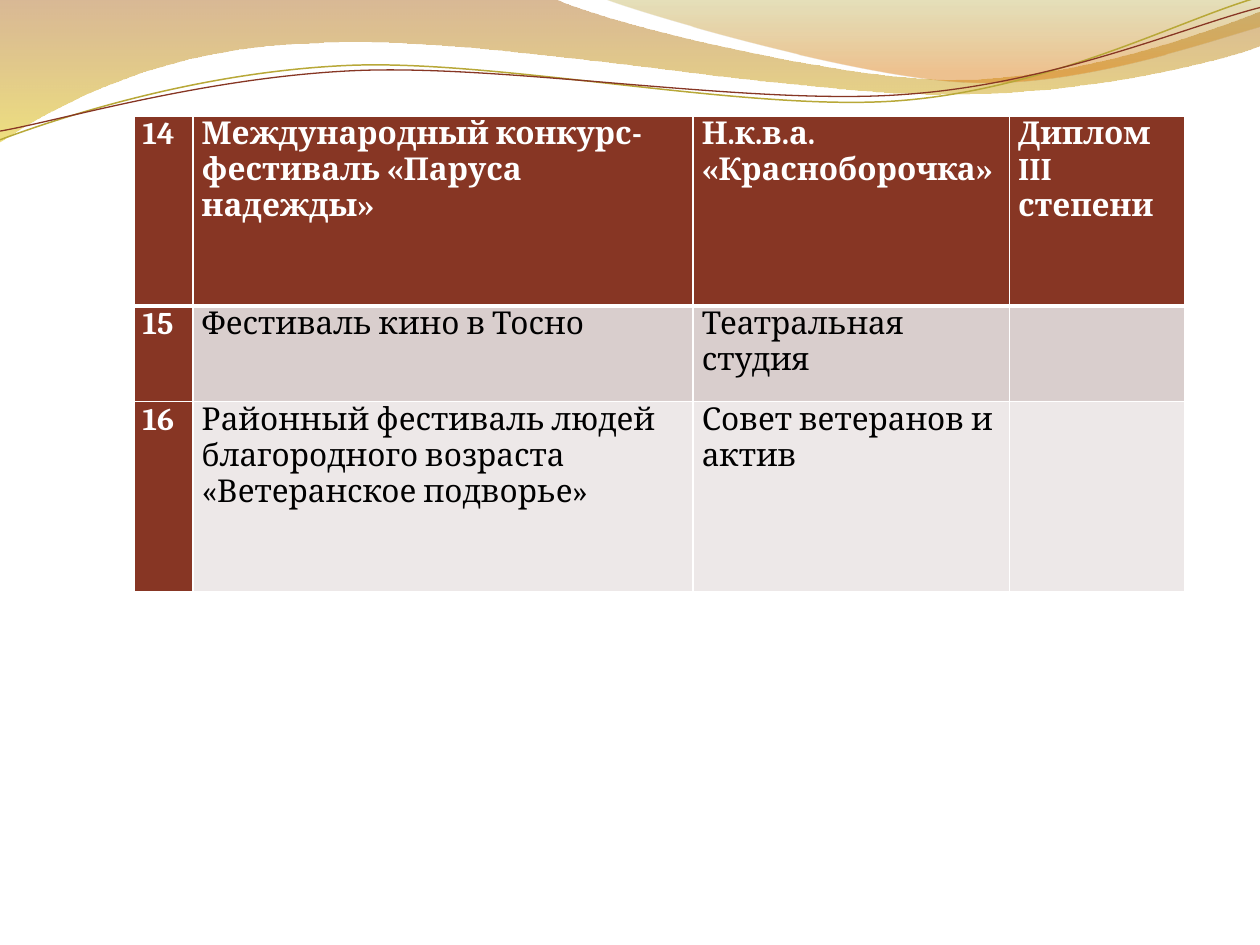
from lxml import etree
from pptx import Presentation
from pptx import util as u
from pptx.dml import color
from pptx.oxml import ns

Pt = u.Pt
FONT = "Cambria"
COLORS = {
    "white": "FFFFFF", "black": "000000", "brick": "873624",
    "band_dark": "D9CECD", "band_light": "EDE8E8", "olive": "B8A838",
    "brown": "AB6415", "yellow": "E1C716", "moss": "AA991F", "orange": "DB780A",
}

# Outlines: a start point, then segments of one point (line) or three (curve)
WIDE_WAVE = [
    (0, 0),
    [(316.8, -0.7)],
    [(342.7, 12.2), (478.1, 45.4), (545.8, 45.4)],
    [(614.2, 45.4), (689.8, 18.7), (720, 6.5)],
    [(720.7, 25.9)],
    [(707.8, 31.7), (626.4, 54.7), (537.1, 54)],
    [(447.8, 54), (275, 20.2), (185, 24.5)],
    [(92.9, 25.9), (33.1, 59.8), (-0.7, 81.4)],
]
RIGHT_WAVE = [
    (344.9, -0.7),
    [(366.5, 7.9), (491, 44.6), (553.7, 46.8)],
    [(616.3, 49.7), (691.9, 23), (720, 15.1)],
    [(720, 0)],
]
OLIVE_LINE = [
    (0, 79.9),
    [(34.6, 67), (113.8, 41), (199.4, 37.4)],
    [(284.4, 33.8), (427, 64.1), (513.4, 57.6)],
    [(599.8, 51.1), (675.4, 10.8), (718.6, -1.4)],
]
BRICK_LINE = [
    (0, 74.9),
    [(33.8, 69.1), (118.1, 43.9), (203.8, 40.3)],
    [(290.2, 36.7), (429.8, 60.5), (516.2, 54)],
    [(601.9, 48.2), (677.5, 15.1), (720, 4.3)],
]

COLUMN_WIDTHS = [33.8, 285.8, 180.7, 100.1]
ROW_HEIGHTS = [108.7, 54.7, 108.7]
ROWS = [
    ["14", "Международный конкурс-фестиваль «Паруса надежды»",
     "Н.к.в.а. «Красноборочка»", "Диплом III степени"],
    ["15", "Фестиваль кино в Тосно", "Театральная студия", ""],
    ["16", "Районный фестиваль людей благородного возраста «Ветеранское подворье»",
     "Совет ветеранов и актив", ""],
]


def rgb(name):
    return color.RGBColor.from_string(COLORS[name])


def add_curve(slide, left, top, outline, close):
    """Build a freeform, then turn each three-point segment into a Bezier curve."""
    start, *segments = outline

    def place(point):
        return Pt(left + point[0]), Pt(top + point[1])

    builder = slide.shapes.build_freeform(*place(start))
    builder.add_line_segments(
        [place(point) for segment in segments for point in segment], close=close)
    shape = builder.convert_to_shape()
    shape.shadow.inherit = False
    steps = iter(list(shape.element.iter(ns.qn("a:lnTo"))))
    for segment in segments:
        first, *others = [next(steps) for _ in segment]
        if others:
            curve = etree.Element(ns.qn("a:cubicBezTo"))
            first.addprevious(curve)
            for step in [first, *others]:
                curve.append(step[0])
                step.getparent().remove(step)
    return shape


def add_wave(slide, left, top, outline, stops):
    shape = add_curve(slide, left, top, outline, close=True)
    shape.line.fill.background()
    shape.fill.gradient()
    shape.fill.gradient_angle = 270
    for stop, (position, name, opacity) in zip(shape.fill.gradient_stops, stops):
        stop.position = position
        stop.color.rgb = rgb(name)
    for element, (_, _, opacity) in zip(shape.element.spPr.iter(ns.qn("a:srgbClr")), stops):
        etree.SubElement(element, ns.qn("a:alpha"), val=str(opacity * 1000))


def add_wave_line(slide, left, top, outline, name, width):
    shape = add_curve(slide, left, top, outline, close=False)
    shape.fill.background()
    shape.line.color.rgb = rgb(name)
    shape.line.width = Pt(width)


def add_header_waves(slide, left, top):
    add_wave(slide, left, top, WIDE_WAVE, [(0, "brown", 45), (1, "yellow", 55)])
    add_wave(slide, left, top, RIGHT_WAVE, [(0, "moss", 30), (0.8, "orange", 45)])
    add_wave_line(slide, left, top, OLIVE_LINE, "olive", 0.85)
    add_wave_line(slide, left, top, BRICK_LINE, "brick", 0.75)


def set_borders(cell, widths):
    properties = cell._tc.get_or_add_tcPr()
    for side, width in widths.items():
        line = etree.SubElement(properties, ns.qn(f"a:ln{side}"), w=str(Pt(width)))
        fill = etree.SubElement(line, ns.qn("a:solidFill"))
        etree.SubElement(fill, ns.qn("a:srgbClr"), val=COLORS["white"])


def fill_cell(cell, wording, background, strong):
    cell.fill.solid()
    cell.fill.fore_color.rgb = rgb(background)
    cell.margin_left = cell.margin_right = Pt(5)
    cell.margin_top = cell.margin_bottom = 0
    paragraph = cell.text_frame.paragraphs[0]
    if not wording:
        paragraph.font.size = Pt(18)
        return
    run = paragraph.add_run()
    run.text = wording
    run.font.name = FONT
    run.font.size = Pt(18)
    run.font.bold = strong
    run.font.color.rgb = rgb("white" if strong else "black")


def add_events_table(slide, left, top):
    table = slide.shapes.add_table(
        len(ROWS), len(COLUMN_WIDTHS), Pt(left), Pt(top),
        Pt(sum(COLUMN_WIDTHS)), Pt(sum(ROW_HEIGHTS))).table
    for column, width in zip(table.columns, COLUMN_WIDTHS):
        column.width = Pt(width)
    for row, height in zip(table.rows, ROW_HEIGHTS):
        row.height = Pt(height)
    for i, row in enumerate(ROWS):
        band = "band_dark" if i % 2 else "band_light"
        for j, wording in enumerate(row):
            cell = table.cell(i, j)
            strong = i == 0 or j == 0
            # A thick rule parts the first row from the rest
            set_borders(cell, {"L": 1, "R": 1, "T": 3 if i == 1 else 1,
                               "B": 3 if i == 0 else 1})
            fill_cell(cell, wording, "brick" if strong else band, strong)


def main():
    presentation = Presentation()
    presentation.slide_width, presentation.slide_height = Pt(720), Pt(540)
    slide = presentation.slides.add_slide(presentation.slide_layouts[6])
    slide.background.fill.solid()
    slide.background.fill.fore_color.rgb = rgb("white")
    add_header_waves(slide, 0, 0)
    add_events_table(slide, 76.5, 66.2)
    presentation.save("out.pptx")


if __name__ == "__main__":
    main()
